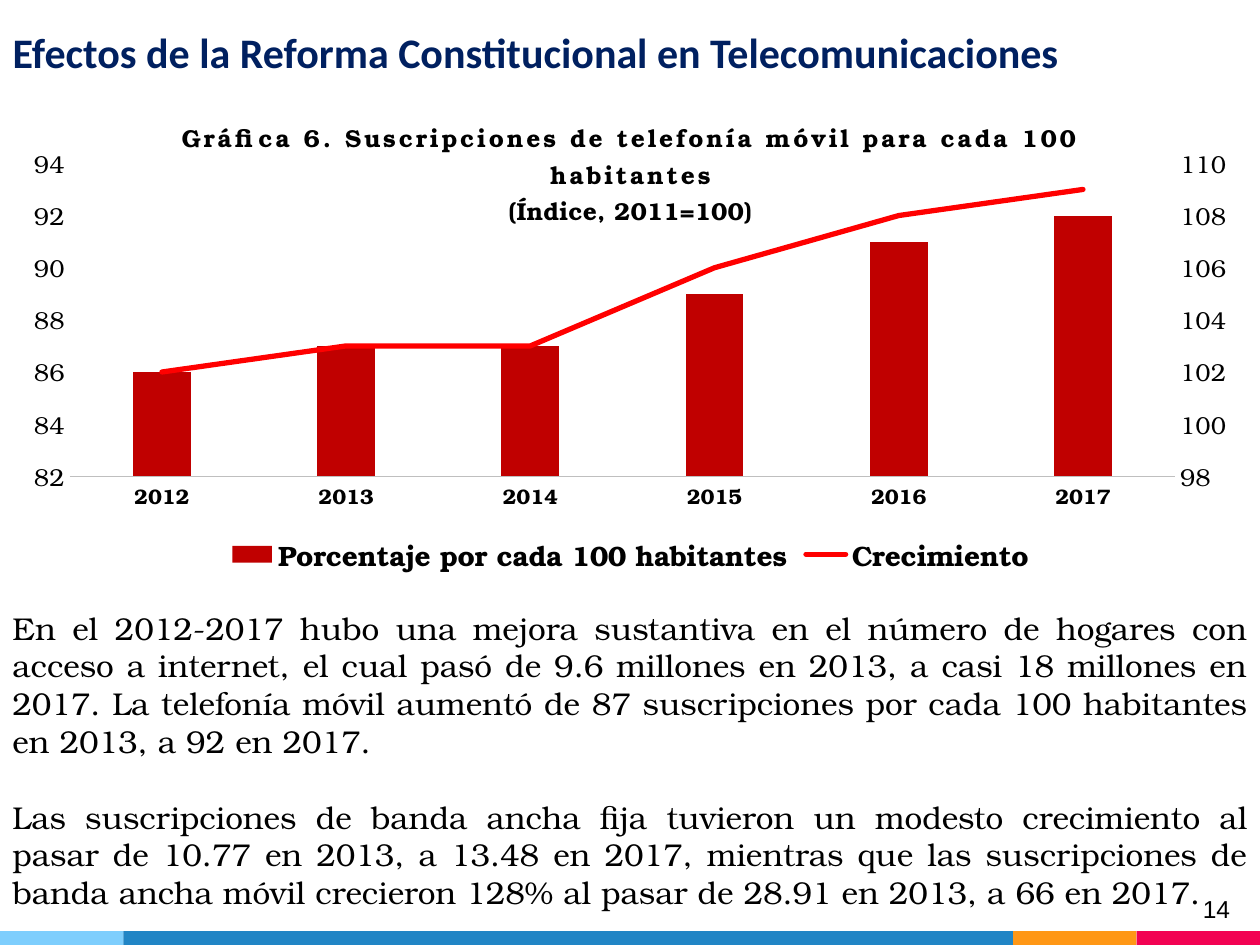
"""Build the slide on mobile subscriptions after the telecommunications reform."""
from copy import deepcopy

from pptx import Presentation
from pptx.chart.data import CategoryChartData
from pptx.dml.color import RGBColor
from pptx.enum.chart import XL_CHART_TYPE, XL_LEGEND_POSITION, XL_MARKER_STYLE, XL_TICK_MARK
from pptx.enum.shapes import MSO_SHAPE
from pptx.enum.text import MSO_ANCHOR, PP_ALIGN
from pptx.oxml import parse_xml
from pptx.oxml.ns import nsdecls, qn
from pptx.util import Inches, Pt

COLORS = {"ink": "000000", "title": "002060", "bar": "C00000", "line": "FF0000", "axis": "BFBFBF",
          "sky": "7ECEFD", "blue": "2185C5", "orange": "FF9715", "pink": "F20253"}
SERIF = "TeX Gyre Bonum"


def color(name):
    return RGBColor.from_string(COLORS[name])


def style(font, size, name=SERIF, bold=False, ink="ink"):
    font.size, font.name, font.bold = Pt(size), name, bold
    font.color.rgb = color(ink)


deck = Presentation()
deck.slide_width, deck.slide_height = Inches(10), Inches(7.5)
width, height = deck.slide_width, deck.slide_height
page = deck.slides.add_slide(deck.slide_layouts[5])

band_height = Inches(0.11)
left = 0
for name, share in (("sky", 0.098), ("blue", 0.706), ("orange", 0.098), ("pink", 0.098)):
    band = page.shapes.add_shape(MSO_SHAPE.RECTANGLE, left, height - band_height,
                                 int(width * share), band_height)
    band.shadow.inherit = False
    band.fill.solid()
    band.fill.fore_color.rgb = color(name)
    band.line.fill.background()
    left += band.width

title = page.shapes.title
title.left, title.top, title.width, title.height = 0, Inches(0.06), width, Inches(0.7)
title.text_frame.text = "Efectos de la Reforma Constitucional en Telecomunicaciones"
title.text_frame.vertical_anchor = MSO_ANCHOR.MIDDLE
para = title.text_frame.paragraphs[0]
para.alignment = PP_ALIGN.LEFT
style(para.font, 24, "Calibri", True, "title")

data = CategoryChartData(number_format="#,##0")
data.categories = ["2012", "2013", "2014", "2015", "2016", "2017"]
data.add_series("Porcentaje por cada 100 habitantes", (86, 87, 87, 89, 91, 92))
data.add_series("Crecimiento", (102, 103, 103, 106, 108, 109))
chart = page.shapes.add_chart(XL_CHART_TYPE.COLUMN_CLUSTERED, Inches(0.06), Inches(0.76),
                              Inches(9.89), Inches(3.84), data).chart
style(chart.font, 10)

chart.has_title = True
heading = chart.chart_title.text_frame
heading.text = "Gráfica 6. Suscripciones de telefonía móvil para cada 100 habitantes\n(Índice, 2011=100)"
for para in heading.paragraphs:
    para.line_spacing = 1.25
    style(para.font, 14, bold=True)
    style(para.runs[0].font, 14, bold=True)
heading.paragraphs[0].runs[0].font._element.set("spc", "150")
chart.chart_title.include_in_layout = True

chart.has_legend = True
chart.legend.position = XL_LEGEND_POSITION.BOTTOM
chart.legend.include_in_layout = False
style(chart.legend.font, 16, bold=True)

for axis, size, bold in ((chart.category_axis, 12, True), (chart.value_axis, 14, False)):
    axis.has_major_gridlines = False
    axis.major_tick_mark = axis.minor_tick_mark = XL_TICK_MARK.NONE
    style(axis.tick_labels.font, size, bold=bold)
chart.category_axis.format.line.color.rgb = color("axis")
chart.category_axis.format.line.width = Pt(0.75)
chart.value_axis.format.line.fill.background()
chart.value_axis.minimum_scale, chart.value_axis.maximum_scale = 82, 94
chart.value_axis.major_unit = 2
chart.value_axis.tick_labels.number_format = "#,##0"
chart.value_axis.tick_labels.number_format_is_linked = False

columns = chart.plots[0]
columns.gap_width, columns.overlap = 219, -27
columns.vary_by_categories = False
columns.series[0].format.fill.solid()
columns.series[0].format.fill.fore_color.rgb = color("bar")

area = chart.element.find(".//" + qn("c:plotArea"))
bars = area.find(qn("c:barChart"))
growth = bars.findall(qn("c:ser"))[1]
for extra in growth.findall(qn("c:invertIfNegative")):
    growth.remove(extra)
lines = parse_xml(f'<c:lineChart {nsdecls("c")}><c:grouping val="standard"/><c:varyColors val="0"/>'
                  '<c:marker val="1"/><c:axId val="5001"/><c:axId val="5002"/></c:lineChart>')
lines.insert(2, growth)
bars.addnext(lines)

last_axis = area.find(qn("c:valAx"))
for tag, own, cross, changes in (
        ("c:valAx", "5002", "5001",
         {"c:axPos": "r", "c:crosses": "max", "c:min": "98", "c:max": "110"}),
        ("c:catAx", "5001", "5002", {"c:delete": "1"})):
    twin = deepcopy(area.find(qn(tag)))
    for key, value in {"c:axId": own, "c:crossAx": cross, **changes}.items():
        twin.find(".//" + qn(key)).set("val", value)
    last_axis.addnext(twin)
    last_axis = twin

for old in area.findall(qn("c:layout")):
    area.remove(old)
frame = "".join(f'<c:{key} val="{value}"/>' for key, value in (
    ("layoutTarget", "inner"), ("xMode", "edge"), ("yMode", "edge"),
    ("x", 0.05), ("y", 0.14), ("w", 0.887), ("h", 0.647)))
area.insert(0, parse_xml(f'<c:layout {nsdecls("c")}><c:manualLayout>{frame}</c:manualLayout></c:layout>'))

curve = chart.plots[1].series[0]
curve.smooth = False
curve.marker.style = XL_MARKER_STYLE.NONE
curve.format.line.color.rgb = color("line")
curve.format.line.width = Pt(3)
growth.find(qn("c:spPr")).find(qn("a:ln")).set("cap", "rnd")

body = (
    "En el 2012-2017 hubo una mejora sustantiva en el número de hogares con acceso a internet, "
    "el cual pasó de 9.6 millones en 2013, a casi 18 millones en 2017. La telefonía móvil aumentó "
    "de 87 suscripciones por cada 100 habitantes en 2013, a 92 en 2017.",
    "Las suscripciones de banda ancha fija tuvieron un modesto crecimiento al pasar de 10.77 en 2013, "
    "a 13.48 en 2017, mientras que las suscripciones de banda ancha móvil crecieron 128% al pasar "
    "de 28.91 en 2013, a 66 en 2017.")
for text, place, align, size, name in (
        ("\n".join(body), (0, 4.45, 10, 2.83), PP_ALIGN.JUSTIFY, 18, SERIF),
        ("14", (9.31, 7.04, 0.69, 0.34), PP_ALIGN.CENTER, 14, "Arial")):
    box = page.shapes.add_textbox(*map(Inches, place)).text_frame
    box.word_wrap = True
    box.vertical_anchor = MSO_ANCHOR.BOTTOM
    box.text = text
    for para in box.paragraphs:
        para.alignment = align
        style(para.font, size, name)
    for para in box.paragraphs[1:]:
        para.space_before = Pt(21.6)

deck.save("out.pptx")
